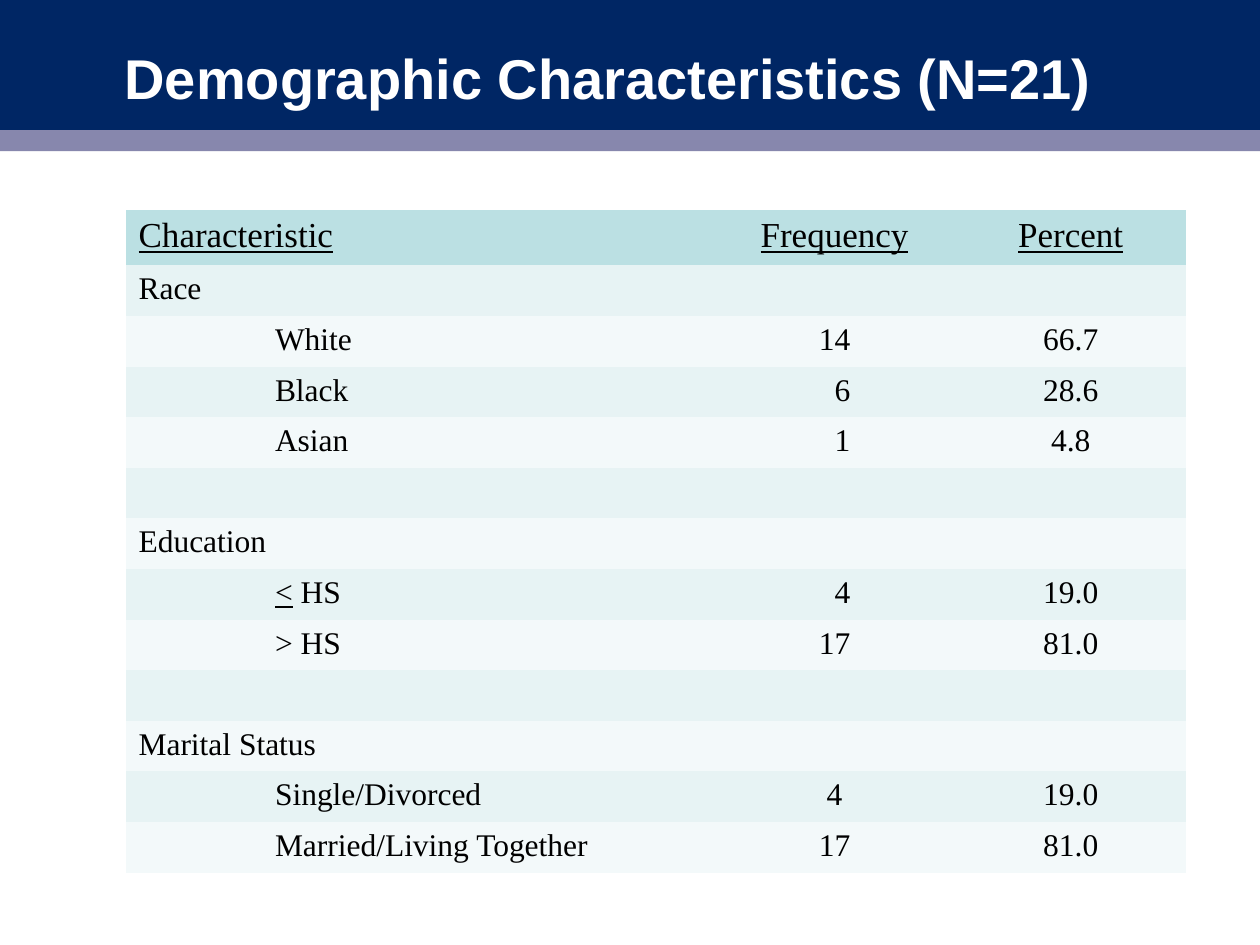
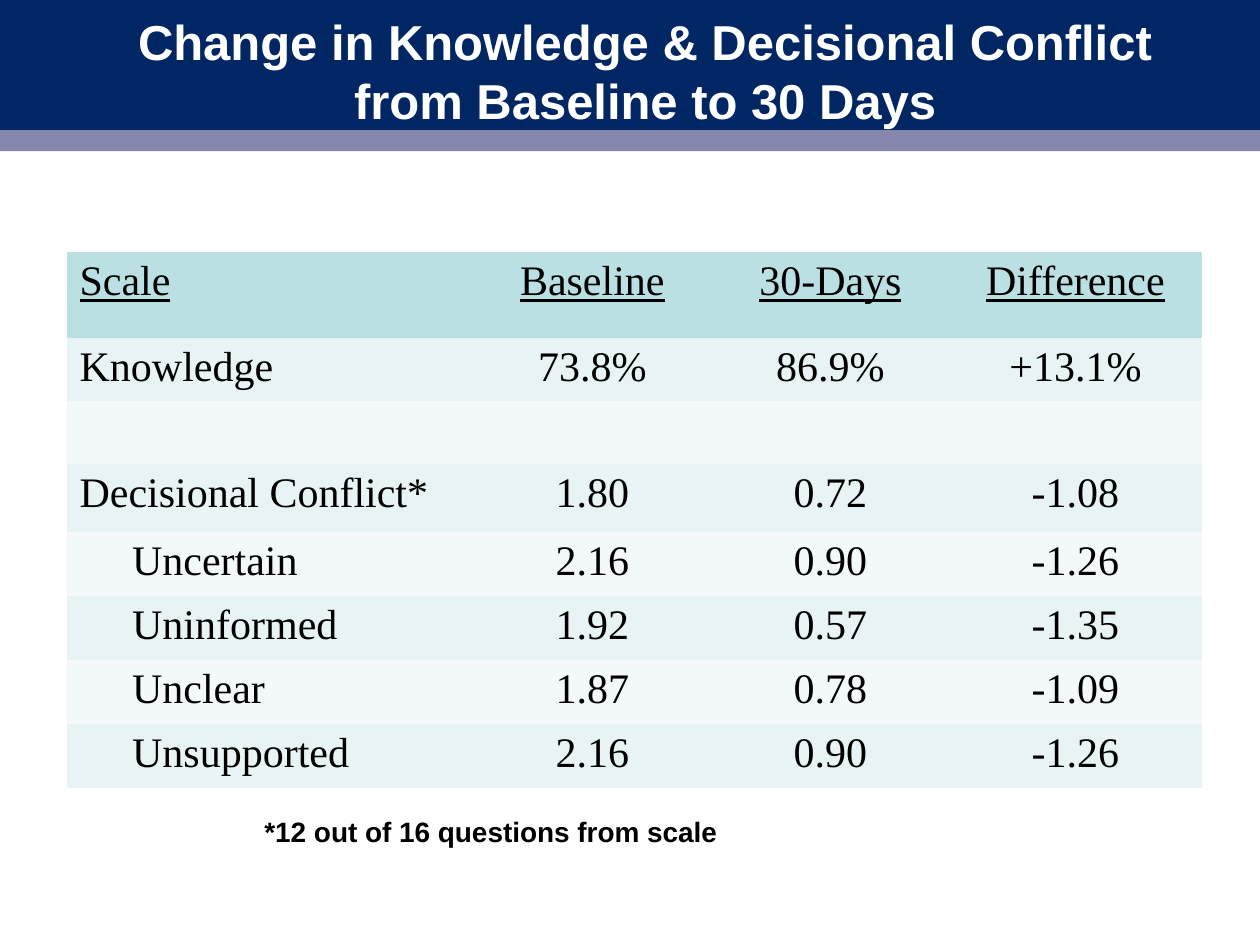
from pptx import Presentation
from pptx.dml.color import RGBColor
from pptx.enum.shapes import MSO_SHAPE
from pptx.enum.text import MSO_ANCHOR, PP_ALIGN
from pptx.oxml.ns import qn
from pptx.util import Cm, Pt

RECTANGLE = MSO_SHAPE.RECTANGLE
MIDDLE = MSO_ANCHOR.MIDDLE
LEFT, CENTER = PP_ALIGN.LEFT, PP_ALIGN.CENTER

NAVY, MAUVE, WHITE, BLACK = "002664", "8787AD", "FFFFFF", "000000"
HEADER_FILL = "BBE0E3"
ROW_FILLS = ("E7F3F4", "F3F9FA")
SANS, SERIF = "Arial", "Times New Roman"
PLAIN_STYLE = "{2D5ABB26-0587-4C30-8999-92F81FD0307C}"
SLIDE_WIDTH, SLIDE_HEIGHT = 25.4, 19.05
BAND_HEIGHT = 2.62

DEMOGRAPHICS = [
    ("Characteristic", "", "Frequency", "Percent"),
    ("Race", "", "", ""),
    ("", "White", "14", "66.7"),
    ("", "Black", "6", "28.6"),
    ("", "Asian", "1", "4.8"),
    ("", "", "", ""),
    ("Education", "", "", ""),
    ("", "<", "4", "19.0"),
    ("", "> HS", "17", "81.0"),
    ("", "", "", ""),
    ("Marital Status", "", "", ""),
    ("", "Single/Divorced", "4", "19.0"),
    ("", "Married/Living Together", "17", "81.0"),
]
AT_MOST_HS_ROW = 7
SHIFTED_COUNT_ROWS = (3, 4, 7)

SCALES = [
    ("Scale", "Baseline", "30-Days", "Difference"),
    ("Knowledge", "73.8%", "86.9%", "+13.1%"),
    ("", "", "", ""),
    ("Decisional Conflict*", "1.80", "0.72", "-1.08"),
    ("Uncertain", "2.16", "0.90", "-1.26"),
    ("Uninformed", "1.92", "0.57", "-1.35"),
    ("Unclear", "1.87", "0.78", "-1.09"),
    ("Unsupported", "2.16", "0.90", "-1.26"),
]
FIRST_SUBSCALE_ROW = 4


def rgb(value):
    """Turn a hex string into a colour."""
    return RGBColor.from_string(value)


def format_runs(paragraph, font, size, color, bold=False, underline=False):
    """Give every run of a paragraph the same look."""
    for run in paragraph.runs:
        run.font.name = font
        run.font.size = Pt(size)
        run.font.color.rgb = rgb(color)
        run.font.bold = bold
        run.font.underline = underline


def indent(paragraph, distance):
    """Move the left edge of a paragraph inwards."""
    paragraph._p.get_or_add_pPr().set("marL", str(Cm(distance)))


def add_band(slide, top, color):
    """Draw a full-width band."""
    band = slide.shapes.add_shape(
        RECTANGLE, 0, Cm(top), Cm(SLIDE_WIDTH), Cm(BAND_HEIGHT))
    band.shadow.inherit = False
    band.fill.solid()
    band.fill.fore_color.rgb = rgb(color)
    band.line.fill.background()


def add_label(slide, box, text, size, color, align=LEFT):
    """Place bold sans-serif text in a box and return its shape."""
    label = slide.shapes.add_textbox(*map(Cm, box))
    label.text_frame.word_wrap = True
    paragraph = label.text_frame.paragraphs[0]
    paragraph.text = text
    paragraph.alignment = align
    format_runs(paragraph, SANS, size, color, bold=True)
    return label


def add_header(slide, box, title, size, align=LEFT, title_indent=0):
    """Draw both bands and the title over them."""
    add_band(slide, 0.43, MAUVE)
    add_band(slide, 0, NAVY)
    heading = add_label(slide, box, title, size, WHITE, align).text_frame
    heading.vertical_anchor = MIDDLE
    heading.margin_left = 0
    indent(heading.paragraphs[0], title_indent)


def fill_cell(cell, text, size, fill, align, underline):
    """Write and colour one table cell."""
    cell.fill.solid()
    cell.fill.fore_color.rgb = rgb(fill)
    if not text:
        cell.margin_top = cell.margin_bottom = 0
        return
    paragraph = cell.text_frame.paragraphs[0]
    paragraph.text = text
    paragraph.alignment = align
    format_runs(paragraph, SERIF, size, BLACK, underline=underline)


def add_striped_table(slide, corner, widths, heights, rows, label_columns,
                      header_size, body_size):
    """Build a striped table with an underlined header row."""
    frame = slide.shapes.add_table(
        len(rows), len(widths), *map(Cm, (*corner, sum(widths), sum(heights))))
    table = frame.table
    table._tbl.tblPr.find(qn("a:tableStyleId")).text = PLAIN_STYLE
    for column, width in zip(table.columns, widths):
        column.width = Cm(width)
    for r, (texts, height) in enumerate(zip(rows, heights)):
        is_header = r == 0
        table.rows[r].height = Cm(height)
        fill = HEADER_FILL if is_header else ROW_FILLS[(r - 1) % 2]
        size = header_size if is_header else body_size
        for c, text in enumerate(texts):
            align = LEFT if c < label_columns else CENTER
            fill_cell(table.cell(r, c), text, size, fill, align, is_header)
    return table


def build_demographics(slide):
    """Build the slide of demographic characteristics."""
    add_header(slide, (0, 0.56, SLIDE_WIDTH, 1.98),
               "Demographic Characteristics (N=21)", 32, title_indent=2.51)
    heights = [1.11] + [1.02] * (len(DEMOGRAPHICS) - 1)
    table = add_striped_table(slide, (2.54, 4.24), (2.75, 9.1, 4.87, 4.65),
                              heights, DEMOGRAPHICS, 2, 20, 18)
    for r, texts in enumerate(DEMOGRAPHICS):
        if not texts[1] and texts[0] != "Race":
            table.cell(r, 0).merge(table.cell(r, 1))
    for r in SHIFTED_COUNT_ROWS:
        indent(table.cell(r, 2).text_frame.paragraphs[0], 0.32)
    at_most_hs = table.cell(AT_MOST_HS_ROW, 1).text_frame.paragraphs[0]
    at_most_hs.add_run().text = " HS"
    format_runs(at_most_hs, SERIF, 18, BLACK)
    at_most_hs.runs[0].font.underline = True


def build_change(slide):
    """Build the slide of changes from baseline to 30 days."""
    add_header(slide, (0.43, 0.43, SLIDE_WIDTH, 1.98),
               "Change in Knowledge & Decisional Conflict\n"
               "from Baseline to 30 Days", 28, CENTER)
    heights = [1.73, 1.27, 1.27, 1.37] + [1.29] * 4
    table = add_striped_table(slide, (1.35, 5.08), (8.18, 4.82, 4.78, 5.1),
                              heights, SCALES, 1, 24, 24)
    for r in range(FIRST_SUBSCALE_ROW, len(SCALES)):
        indent(table.cell(r, 0).text_frame.paragraphs[0], 1.06)
    add_label(slide, (5.08, 16.3, 12.17, 0.99),
              "*12 out of 16 questions from scale", 16, BLACK)


def main():
    """Build and save the presentation."""
    deck = Presentation()
    deck.slide_width, deck.slide_height = Cm(SLIDE_WIDTH), Cm(SLIDE_HEIGHT)
    blank = deck.slide_layouts[6]
    for build in (build_demographics, build_change):
        build(deck.slides.add_slide(blank))
    deck.save("out.pptx")


if __name__ == "__main__":
    main()
